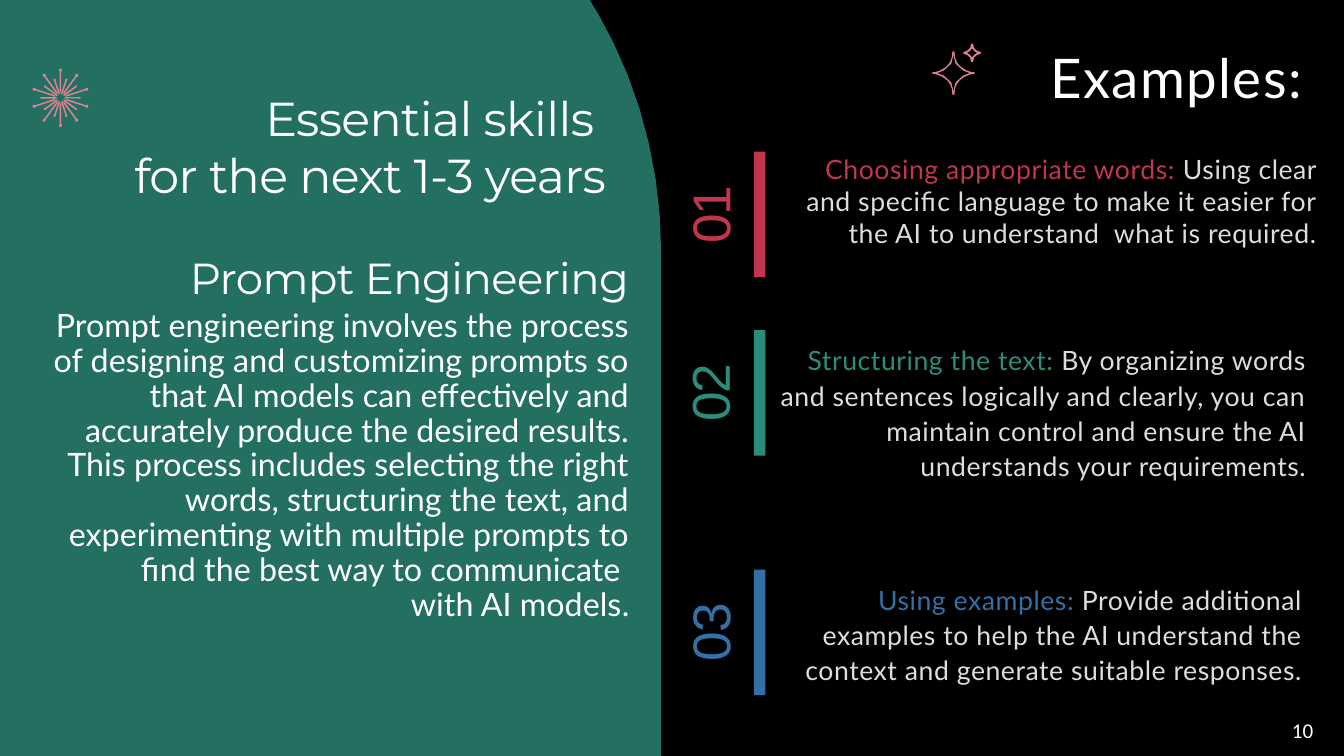
"""Build the prompt engineering slide: a curved panel beside three numbered examples."""
from dataclasses import dataclass
from math import cos, radians, sin
from typing import NamedTuple

from pptx import Presentation
from pptx.dml.color import RGBColor
from pptx.enum.shapes import MSO_SHAPE as Shape
from pptx.enum.text import MSO_ANCHOR as Anchor, MSO_AUTO_SIZE as AutoSize, PP_ALIGN as Align
from pptx.util import Inches, Pt

WHITE, GREY, BLACK = "FFFFFF", "DDDDDD", "000000"
GREEN, PINK = "237063", "DD8493"


class Span(NamedTuple):
    text: str
    size: float
    font: str
    colour: str
    spacing: float = 0


@dataclass
class TextBox:
    place: tuple
    paragraphs: list
    anchor: Anchor = Anchor.TOP
    align: Align = Align.RIGHT
    line_spacing: float | None = None
    rotation: float = 0
    inset: float = 0.1
    wrap: bool = True


@dataclass
class Example:
    number: str
    colour: str
    bar_top: float
    number_place: tuple
    text_place: tuple
    title: str
    detail: str
    line_spacing: float | None = 1.1


class Sparkle(NamedTuple):
    centre: tuple
    start: tuple
    steps: list


PANEL = [
    (3.06, -4.04, 1.56, -3.56, 0.28, -2.73),
    (0, -2.53), (0, 15.76), (13.12, 15.76), (13.12, 5.01),
    (13.12, 0.02, 9.34, -4.04, 4.67, -4.04),
]

SPARKLES = [
    Sparkle((18.92, 1.45), (-0.41, 0.02), [
        (-0.42, -0.01),
        (-0.42, -0.01, -0.31, -0.02, -0.21, -0.08),
        (-0.08, -0.15, -0.02, -0.27, -0.02, -0.42),
        (0.02, -0.43),
        (0.03, -0.02, -0.41, 0.02, -0.41, 0.02),
    ]),
    Sparkle((19.29, 1.05), (-0.17, 0.02), [
        (-0.17, -0.02),
        (-0.16, -0.02, -0.01, -0.04, -0.02, -0.18),
        (0.02, -0.18),
        (0.02, -0.04, -0.1, 0.01, -0.17, 0.02),
    ]),
]

EXAMPLES = [
    Example("01", "C1364E", 3.01, (12.76, 3.53, 2.63, 1.46), (15.56, 2.94, 10.67, 2.57),
            "Choosing appropriate words: ",
            "Using clear and specific language to make it easier for the AI "
            "to understand  what is required.", None),
    Example("02", "2C8C7C", 6.55, (12.75, 7.06, 2.63, 1.46), (15.35, 6.67, 10.67, 3.6),
            "Structuring the text: ",
            "By organizing words and sentences logically and clearly, you can "
            "maintain control and ensure the AI understands your requirements."),
    Example("03", "3370A6", 11.3, (12.76, 11.82, 2.63, 1.46), (15.56, 11.42, 10.38, 2.73),
            "Using examples:",
            " Provide additional examples to help the AI understand the context "
            "and generate suitable responses."),
]

BODY = ("Prompt engineering involves the process of designing and customizing prompts so that "
        "AI models can effectively and accurately produce the desired results. This process "
        "includes selecting the right words, structuring the text, and experimenting with "
        "multiple prompts to find the best way to communicate ")

TEXTS = [
    TextBox((-4, 1.62, 16.12, 2.51),
            [[Span("Essential skills ", 68, "Montserrat", WHITE, -0.9)],
             [Span("for the next 1-3 years", 68, "Montserrat", WHITE, -0.9)]], Anchor.BOTTOM),
    TextBox((1.01, 4.85, 11.57, 1.26),
            [[Span("Prompt Engineering", 62, "Montserrat", WHITE, -0.8)]],
            Anchor.BOTTOM, line_spacing=1.3),
    TextBox((0.35, 6.05, 12.24, 8.06),
            [[Span(BODY, 46, "Lato", WHITE, 0.1)],
             [Span("with AI models", 46, "Lato", WHITE, 0.1), Span(".", 46, "Lato", WHITE, 2.4)]],
            line_spacing=0.9),
    TextBox((15.27, 0.47, 10.67, 1.82), [[Span("Examples:", 78, "Lato", WHITE, 2.1)]],
            Anchor.BOTTOM, line_spacing=0.9),
    TextBox((19.89, 14.08, 6.22, 0.81), [[Span("10", 30, "Calibri", WHITE)]],
            Anchor.MIDDLE, inset=0.05, wrap=False),
]


def paint(fill, colour: str) -> None:
    fill.solid()
    fill.fore_color.rgb = RGBColor.from_string(colour)


def finish(shape, colour: str) -> None:
    shape.shadow.inherit = False
    paint(shape.fill, colour)
    shape.line.fill.background()


def add_block(shapes, kind: Shape, place: tuple, colour: str, rotation: float = 0) -> None:
    shape = shapes.add_shape(kind, *map(Inches, place))
    shape.rotation = rotation
    finish(shape, colour)


def bezier(start: tuple, curve: tuple, count: int) -> list:
    points = [start, curve[:2], curve[2:4], curve[4:]]
    result = []
    for step in range(1, count + 1):
        t = step / count
        weights = ((1 - t) ** 3, 3 * t * (1 - t) ** 2, 3 * t * t * (1 - t), t ** 3)
        result.append(tuple(sum(w * p[axis] for w, p in zip(weights, points)) for axis in (0, 1)))
    return result


def add_outline(shapes, start: tuple, steps: list, colour: str, count: int,
                centre: tuple = (0, 0), mirror: tuple = (1, 1)) -> None:
    points = [start]
    for step in steps:
        points += [step] if len(step) == 2 else bezier(points[-1], step, count)
    placed = [tuple(Inches(c + m * v) for c, m, v in zip(centre, mirror, point))
              for point in points]
    builder = shapes.build_freeform(*placed[0], scale=1.0)
    builder.add_line_segments(placed[1:], close=True)
    finish(builder.convert_to_shape(), colour)


def add_burst(shapes, centre: tuple, start: float, ray: tuple, dot: tuple) -> None:
    for index in range(10):
        angle = start + 36 * index
        for kind, (radius, width, height), turn in ((Shape.RECTANGLE, ray, angle),
                                                    (Shape.OVAL, dot, 0)):
            left = centre[0] + radius * cos(radians(angle)) - width / 2
            top = centre[1] + radius * sin(radians(angle)) - height / 2
            add_block(shapes, kind, (left, top, width, height), PINK, turn)


def add_text(shapes, text: TextBox) -> None:
    box = shapes.add_textbox(*map(Inches, text.place))
    box.rotation = text.rotation
    frame = box.text_frame
    frame.word_wrap = text.wrap
    frame.auto_size = AutoSize.SHAPE_TO_FIT_TEXT
    frame.vertical_anchor = text.anchor
    frame.margin_left = frame.margin_right = Inches(text.inset)
    frame.margin_top = frame.margin_bottom = Inches(text.inset)
    for index, spans in enumerate(text.paragraphs):
        para = frame.add_paragraph() if index else frame.paragraphs[0]
        para.alignment = text.align
        para.line_spacing = text.line_spacing
        for span in spans:
            run = para.add_run()
            run.text = span.text
            run.font.size = Pt(span.size)
            run.font.name = span.font
            paint(run.font.fill, span.colour)
            run._r.get_or_add_rPr().set("spc", str(round(span.spacing * 100)))


def add_example(shapes, item: Example) -> None:
    add_block(shapes, Shape.RECTANGLE, (14.96, item.bar_top, 0.23, 2.49), item.colour)
    add_text(shapes, TextBox(item.number_place, [[Span(item.number, 76, "Arial", item.colour, -1)]],
                             Anchor.BOTTOM, Align.CENTER, 1.3, 270))
    add_text(shapes, TextBox(item.text_place, [[Span(item.title, 38, "Lato", item.colour, 0.8),
                                                Span(item.detail, 38, "Lato", GREY, 0.8)]],
                             line_spacing=item.line_spacing))


def main() -> None:
    deck = Presentation()
    deck.slide_width, deck.slide_height = Inches(26.67), Inches(15)
    page = deck.slides.add_slide(deck.slide_layouts[6])
    paint(page.background.fill, BLACK)
    add_outline(page.shapes, (4.67, -4.04), PANEL, GREEN, 20)
    burst = page.shapes.add_group_shape().shapes
    add_burst(burst, (1.2, 1.94), 90, (0.33, 0.44, 0.03), (0.55, 0.06, 0.06))
    add_burst(burst, (1.2, 1.94), 72, (0.23, 0.31, 0.03), (0.38, 0.04, 0.04))
    stars = page.shapes.add_group_shape().shapes
    for sparkle in SPARKLES:
        for mirror in ((1, 1), (1, -1), (-1, 1), (-1, -1)):
            add_outline(stars, sparkle.start, sparkle.steps, PINK, 4, sparkle.centre, mirror)
    for item in EXAMPLES:
        add_example(page.shapes, item)
    for text in TEXTS:
        add_text(page.shapes, text)
    deck.save("out.pptx")


if __name__ == "__main__":
    main()
